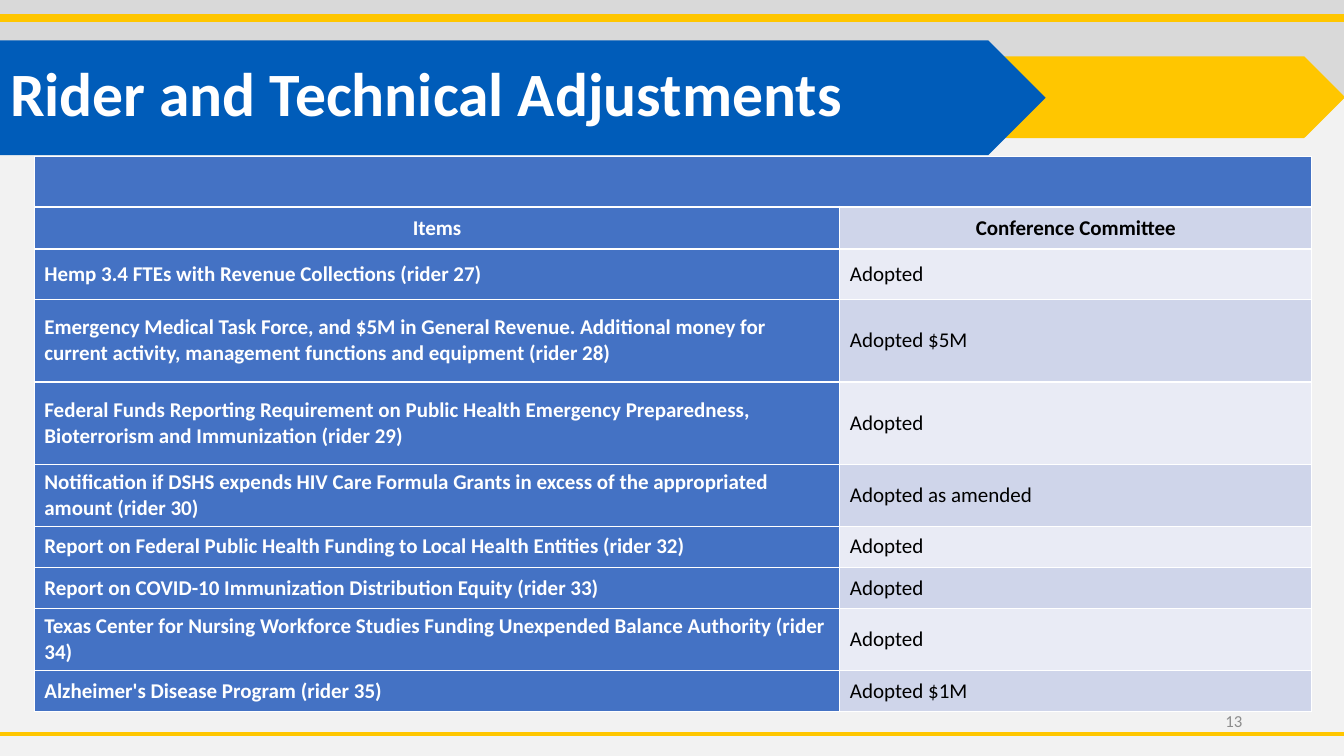
from dataclasses import dataclass

import lxml.etree
import pptx
import pptx.dml.color
import pptx.enum.shapes
import pptx.enum.text
import pptx.oxml.ns
import pptx.util

RGBColor = pptx.dml.color.RGBColor
MSO_SHAPE = pptx.enum.shapes.MSO_SHAPE
PP_ALIGN = pptx.enum.text.PP_ALIGN
MIDDLE = pptx.enum.text.MSO_ANCHOR.MIDDLE

EMU_PER_PX = 9144  # 100 px to the inch
FONT = "Calibri"

PAGE = RGBColor(0xF2, 0xF2, 0xF2)
BAND_GRAY = RGBColor(0xD9, 0xD9, 0xD9)
GOLD = RGBColor(0xFF, 0xC6, 0x00)
BLUE = RGBColor(0x00, 0x5C, 0xB9)
ITEM_BLUE = RGBColor(0x44, 0x72, 0xC4)
STRIPE_DARK = RGBColor(0xCF, 0xD5, 0xEA)
STRIPE_LIGHT = RGBColor(0xE9, 0xEB, 0xF5)
WHITE = RGBColor(0xFF, 0xFF, 0xFF)
BLACK = RGBColor(0x00, 0x00, 0x00)
NUMBER_GRAY = RGBColor(0x8C, 0x8C, 0x8C)


@dataclass(frozen=True)
class Block:
    kind: MSO_SHAPE
    left: int
    top: int
    width: int
    height: int
    color: RGBColor


@dataclass(frozen=True)
class Rule:
    top: int
    weight: int


@dataclass(frozen=True)
class Rider:
    item: str
    outcome: str
    height: int


BLOCKS = [
    Block(MSO_SHAPE.RECTANGLE, 0, -3, 1333, 98, BAND_GRAY),
    Block(MSO_SHAPE.PENTAGON, 709, 56, 625, 81, GOLD),
    Block(MSO_SHAPE.PENTAGON, 0, 40, 1037, 114, BLUE),
]
RULES = [Rule(728, 3), Rule(18, 6)]
COLUMN_WIDTHS = [799, 468]
BANNER_HEIGHT = 50
ROWS = [
    Rider("Items", "Conference Committee", 42),
    Rider("Hemp 3.4 FTEs with Revenue Collections (rider 27)", "Adopted", 50),
    Rider("Emergency Medical Task Force, and $5M in General Revenue. Additional money for "
          "current activity, management functions and equipment (rider 28)", "Adopted $5M", 82),
    Rider("Federal Funds Reporting Requirement on Public Health Emergency Preparedness, "
          "Bioterrorism and Immunization (rider 29)", "Adopted", 82),
    Rider("Notification if DSHS expends HIV Care Formula Grants in excess of the appropriated "
          "amount (rider 30)", "Adopted as amended", 61),
    Rider("Report on Federal Public Health Funding to Local Health Entities (rider 32)",
          "Adopted", 41),
    Rider("Report on COVID-10 Immunization Distribution Equity (rider 33)", "Adopted", 41),
    Rider("Texas Center for Nursing Workforce Studies Funding Unexpended Balance Authority "
          "(rider 34)", "Adopted", 61),
    Rider("Alzheimer's Disease Program (rider 35)", "Adopted $1M", 41),
]


def px(length: int) -> pptx.util.Emu:
    return pptx.util.Emu(length * EMU_PER_PX)


def format_paragraph(paragraph, size: int, color: RGBColor, bold: bool, alignment) -> None:
    paragraph.alignment = alignment
    paragraph.font.name = FONT
    paragraph.font.size = pptx.util.Pt(size)
    paragraph.font.bold = bold
    paragraph.font.color.rgb = color


def add_block(slide, block: Block) -> None:
    shape = slide.shapes.add_shape(
        block.kind, px(block.left), px(block.top), px(block.width), px(block.height))
    shape.shadow.inherit = False
    shape.fill.solid()
    shape.fill.fore_color.rgb = block.color
    shape.line.fill.background()


def add_rule(slide, rule: Rule) -> None:
    connector = slide.shapes.add_connector(
        pptx.enum.shapes.MSO_CONNECTOR.STRAIGHT, 0, px(rule.top), px(1333), px(rule.top))
    connector.line.color.rgb = GOLD
    connector.line.width = pptx.util.Pt(rule.weight)
    lxml.etree.SubElement(connector._element.spPr, pptx.oxml.ns.qn("a:effectLst"))


def place_title(slide, text: str) -> None:
    title = slide.shapes.title
    title.left, title.top, title.width, title.height = px(0), px(23), px(1150), px(145)
    frame = title.text_frame
    frame.text = text
    frame.auto_size = pptx.enum.text.MSO_AUTO_SIZE.NONE
    frame.vertical_anchor = MIDDLE
    frame.paragraphs[0].line_spacing = 0.9
    format_paragraph(frame.paragraphs[0], 44, WHITE, True, PP_ALIGN.LEFT)
    slide.shapes._spTree.append(title._element)  # bring in front of the banner


def style_cell(cell, fill: RGBColor, top: float = 1, bottom: float = 1) -> None:
    properties = cell._tc.get_or_add_tcPr()
    for side, weight in (("L", 1), ("R", 1), ("T", top), ("B", bottom)):
        border = lxml.etree.SubElement(
            properties, pptx.oxml.ns.qn(f"a:ln{side}"), w=str(pptx.util.Pt(weight)))
        solid = lxml.etree.SubElement(border, pptx.oxml.ns.qn("a:solidFill"))
        lxml.etree.SubElement(solid, pptx.oxml.ns.qn("a:srgbClr"), val=str(WHITE))
    cell.fill.solid()
    cell.fill.fore_color.rgb = fill
    cell.vertical_anchor = MIDDLE


def add_rider_table(slide) -> None:
    heights = [BANNER_HEIGHT] + [row.height for row in ROWS]
    table = slide.shapes.add_table(
        len(heights), len(COLUMN_WIDTHS), px(34), px(155),
        px(sum(COLUMN_WIDTHS)), px(sum(heights))).table
    for column, width in zip(table.columns, COLUMN_WIDTHS):
        column.width = px(width)
    for table_row, height in zip(table.rows, heights):
        table_row.height = px(height)

    # Empty banner row
    table.cell(0, 0).merge(table.cell(0, 1))
    for cell in table.rows[0].cells:
        style_cell(cell, ITEM_BLUE, bottom=1.5)

    # Heading row and riders
    for index, row in enumerate(ROWS, start=1):
        heading = index == 1
        stripe = STRIPE_DARK if index % 2 else STRIPE_LIGHT
        entries = ((row.item, ITEM_BLUE, WHITE, True), (row.outcome, stripe, BLACK, heading))
        for column, (text, fill, color, bold) in enumerate(entries):
            cell = table.cell(index, column)
            cell.text = text
            style_cell(cell, fill, top=1.5 if heading else 1)
            if heading:
                cell.margin_left = cell.margin_right = cell.margin_top = px(1)
                cell.margin_bottom = 0
            format_paragraph(cell.text_frame.paragraphs[0], 15, color, bold,
                             PP_ALIGN.CENTER if heading else PP_ALIGN.LEFT)


def add_slide_number(slide, number: str) -> None:
    frame = slide.shapes.add_textbox(px(942), px(695), px(300), px(40)).text_frame
    frame.word_wrap = True
    frame.vertical_anchor = MIDDLE
    frame.text = number
    format_paragraph(frame.paragraphs[0], 12, NUMBER_GRAY, False, PP_ALIGN.RIGHT)


def main() -> None:
    presentation = pptx.Presentation()
    presentation.slide_width, presentation.slide_height = px(1333), px(750)
    slide = presentation.slides.add_slide(presentation.slide_layouts[5])
    slide.background.fill.solid()
    slide.background.fill.fore_color.rgb = PAGE

    # Banner and rules
    for block in BLOCKS:
        add_block(slide, block)
    for rule in RULES:
        add_rule(slide, rule)

    # Content
    place_title(slide, "Rider and Technical Adjustments")
    add_rider_table(slide)
    add_slide_number(slide, "13")
    presentation.save("out.pptx")


if __name__ == "__main__":
    main()
